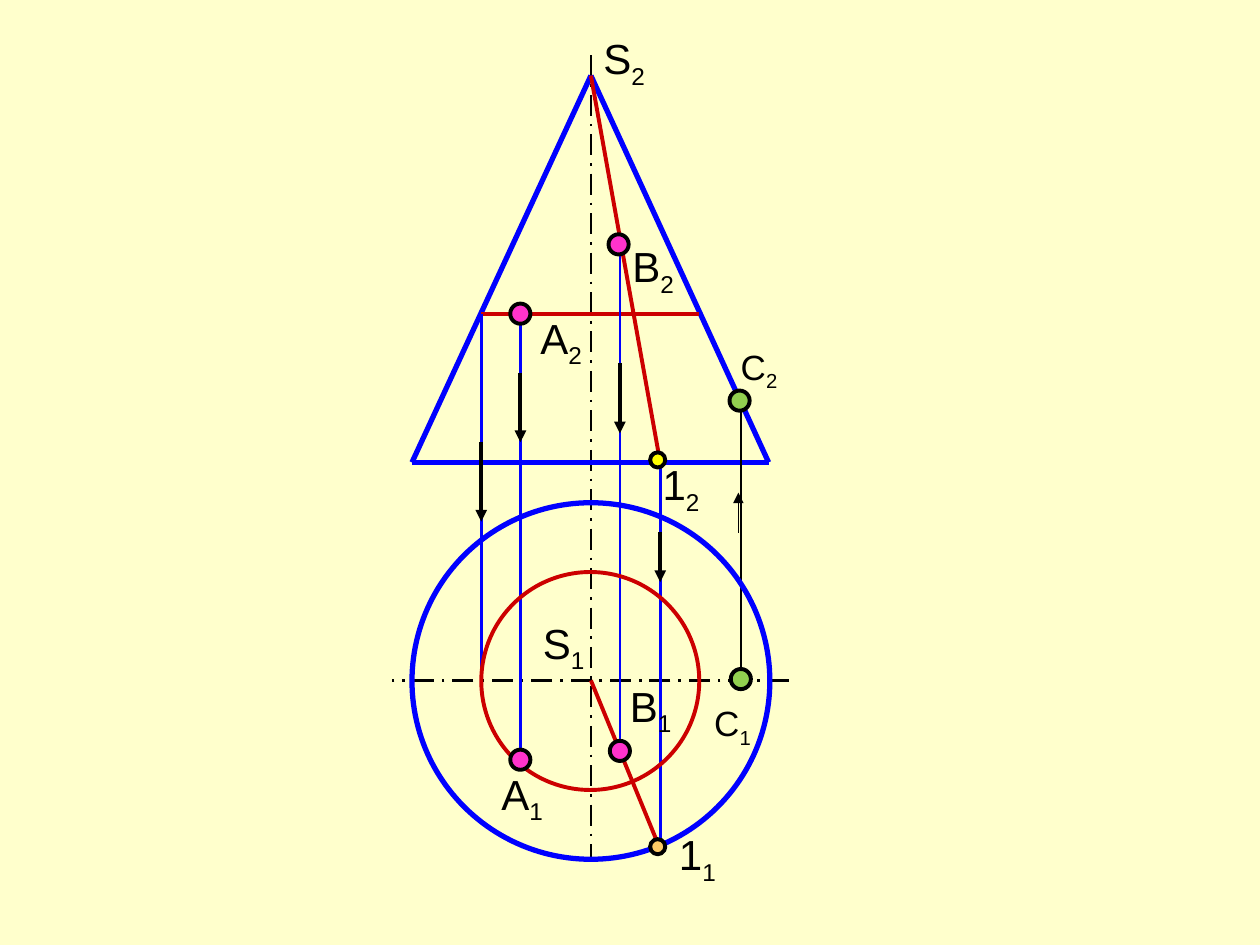
"""Build a slide with two projections of a cone and points A, B and C on its surface."""
import pptx
import pptx.dml.color
import pptx.enum.dml
import pptx.enum.shapes
import pptx.enum.text
import pptx.oxml.ns
import pptx.util
from lxml import etree

Inches, Pt = pptx.util.Inches, pptx.util.Pt
BLACK, BLUE, RED = "000000", "0000FF", "CC0000"
PINK, GREEN, YELLOW, ORANGE = "FF33CC", "92D050", "FFFF00", "FFCC66"

AXIS_X, AXIS_Y = 4.69, 5.4
APEX_Y, BASE_Y, SECTION_Y = 0.6, 3.67, 2.49
LEFT, RIGHT = 3.27, 6.1
SECTION_LEFT, SECTION_RIGHT = 3.82, 5.55
A_X, B_X, ONE_X, C_X = 4.13, 4.92, 5.24, 5.88
ONE_Y = 6.74

AXES = [(AXIS_X, 0.44, AXIS_X, 6.82), (6.26, AXIS_Y, 3.11, AXIS_Y)]
LINES = [
    (RIGHT, BASE_Y, LEFT, BASE_Y, BLUE, 3),
    (AXIS_X, APEX_Y, LEFT, BASE_Y, BLUE, 3),
    (AXIS_X, APEX_Y, RIGHT, BASE_Y, BLUE, 3),
    (SECTION_LEFT, SECTION_Y, SECTION_RIGHT, SECTION_Y, RED, 2.25),
    (SECTION_LEFT, SECTION_Y, SECTION_LEFT, AXIS_Y, BLUE, 1.5),
    (A_X, SECTION_Y, A_X, 6.03, BLUE, 1.5),
    (AXIS_X, APEX_Y, ONE_X, BASE_Y, RED, 2.25),
    (ONE_X, BASE_Y, ONE_X, ONE_Y, BLUE, 1.5),
    (AXIS_X, AXIS_Y, ONE_X, ONE_Y, RED, 2.25),
    (B_X, 1.94, B_X, 5.95, BLUE, 1.5),
    (C_X, 5.34, C_X, 3.15, BLACK, 1.5),
]
ARROWS = [
    (SECTION_LEFT, 3.51, 4.14, 2.25),
    (A_X, 2.96, 3.51, 2.25),
    (B_X, 2.88, 3.44, 2.25),
    (ONE_X, 4.22, 4.62, 2.25),
    (5.86, 4.23, 3.91, 0.75),
]
CIRCLES = [
    (3.27, 3.99, 2.84, 2.83, BLUE, 3),
    (SECTION_LEFT, 4.54, 1.73, 1.73, RED, 2.25),
]
DOTS = [
    (4.84, 5.88, 0.16, PINK),
    (4.83, 1.86, 0.16, PINK),
    (4.05, 2.41, 0.16, PINK),
    (4.05, 5.95, 0.16, PINK),
    (5.16, 3.59, 0.12, YELLOW),
    (5.16, 6.66, 0.12, ORANGE),
    (5.8, 5.31, 0.16, GREEN),
    (5.79, 3.1, 0.16, GREEN),
]
LABELS = [
    ("S", "2", 4.69, 0.21, 0.63, 24, True),
    ("S", "1", 4.21, 4.85, 0.55, 24, False),
    ("A", "2", 4.19, 2.43, 0.55, 24, True),
    ("A", "1", 3.88, 6.05, 0.55, 24, False),
    ("B", "2", 4.92, 1.86, 0.55, 24, False),
    ("B", "1", 4.9, 5.35, 0.57, 24, True),
    ("1", "2", 5.16, 3.59, 0.51, 24, False),
    ("1", "1", 5.29, 6.53, 0.51, 24, False),
    ("С", "1", 5.57, 5.52, 0.51, 20, False),
    ("С", "2", 5.78, 2.69, 0.51, 20, False),
]


def rgb(color):
    return pptx.dml.color.RGBColor.from_string(color)


def add_line(s, x1, y1, x2, y2, color, width):
    sp = s.shapes.add_connector(
        pptx.enum.shapes.MSO_CONNECTOR.STRAIGHT,
        Inches(x1), Inches(y1), Inches(x2), Inches(y2))
    sp.line.color.rgb = rgb(color)
    sp.line.width = Pt(width)
    etree.SubElement(sp._element.spPr, pptx.oxml.ns.qn("a:effectLst"))
    return sp


def add_arrow(s, x, y1, y2, width):
    sp = add_line(s, x, y1, x, y2, BLACK, width)
    etree.SubElement(sp.line._get_or_add_ln(), pptx.oxml.ns.qn("a:tailEnd"), type="triangle")


def add_ellipse(s, x, y, w, h, color, width, fill=None):
    sp = s.shapes.add_shape(
        pptx.enum.shapes.MSO_SHAPE.OVAL, Inches(x), Inches(y), Inches(w), Inches(h))
    sp.shadow.inherit = False
    sp.line.color.rgb = rgb(color)
    sp.line.width = Pt(width)
    if fill:
        sp.fill.solid()
        sp.fill.fore_color.rgb = rgb(fill)
    else:
        sp.fill.background()


def add_label(s, name, index, x, y, w, size, wrap):
    h = 0.5 if size == 24 else 0.44
    tf = s.shapes.add_textbox(Inches(x), Inches(y), Inches(w), Inches(h)).text_frame
    tf.word_wrap = wrap
    tf.auto_size = pptx.enum.text.MSO_AUTO_SIZE.SHAPE_TO_FIT_TEXT
    p = tf.paragraphs[0]
    for text in (name, index):
        r = p.add_run()
        r.text = text
        r.font.name = "Arial"
        r.font.size = Pt(size)
        r.font.color.rgb = rgb(BLACK)
    r._r.get_or_add_rPr().set("baseline", "-25000")


def main():
    prs = pptx.Presentation()
    prs.slide_width, prs.slide_height = Inches(10), Inches(7.5)
    s = prs.slides.add_slide(prs.slide_layouts[6])
    s.background.fill.solid()
    s.background.fill.fore_color.rgb = rgb("FFFFCC")
    for axis in AXES:
        sp = add_line(s, *axis, BLACK, 1.5)
        sp.line.dash_style = pptx.enum.dml.MSO_LINE.LONG_DASH_DOT
    for line in LINES:
        add_line(s, *line)
    for circle in CIRCLES:
        add_ellipse(s, *circle)
    for arrow in ARROWS:
        add_arrow(s, *arrow)
    for x, y, d, fill in DOTS:
        add_ellipse(s, x, y, d, d, BLACK, 2.25, fill)
    for label in LABELS:
        add_label(s, *label)
    prs.save("out.pptx")


if __name__ == "__main__":
    main()
